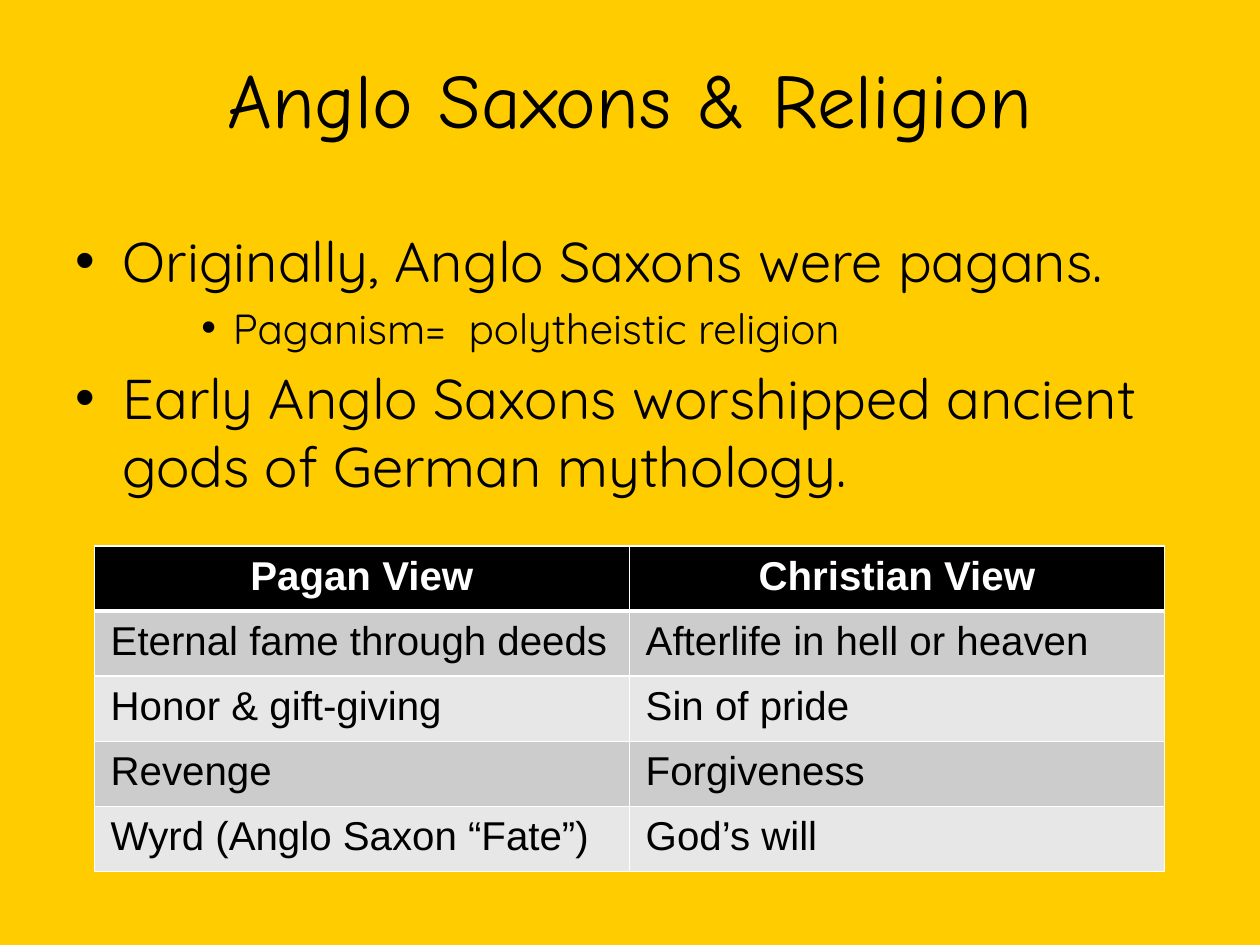
from lxml.etree import SubElement
from pptx import Presentation
from pptx.dml.color import RGBColor
from pptx.enum.text import MSO_ANCHOR, PP_ALIGN
from pptx.oxml.ns import qn
from pptx.util import Pt

YELLOW = RGBColor(0xFF, 0xCC, 0x00)
BLACK = RGBColor(0x00, 0x00, 0x00)
WHITE = RGBColor(0xFF, 0xFF, 0xFF)
GREY = RGBColor(0xCC, 0xCC, 0xCC)
PALE_GREY = RGBColor(0xE7, 0xE7, 0xE7)

TITLE = "Anglo Saxons & Religion"
POINTS = [
    (0, "Originally, Anglo Saxons were pagans."),
    (2, "Paganism=  polytheistic religion"),
    (0, "Early Anglo Saxons worshipped ancient gods of German mythology."),
]
LEVELS = {0: (32, 27, 27), 2: (24, 90, 18)}
VIEWS = [
    ("Pagan View", "Christian View"),
    ("Eternal fame through deeds", "Afterlife in hell or heaven"),
    ("Honor & gift-giving", "Sin of pride"),
    ("Revenge", "Forgiveness"),
    ("Wyrd (Anglo Saxon “Fate”)", "God’s will"),
]


def format_text(paragraph, font_name, size, color=BLACK, bold=False):
    """Apply one font to every run of a paragraph."""
    for run in paragraph.runs:
        run.font.name = font_name
        run.font.size = Pt(size)
        run.font.bold = bold
        run.font.color.rgb = color


def add_bullet(paragraph, margin, hanging):
    """Give a paragraph a round bullet with a hanging indent."""
    properties = paragraph._p.get_or_add_pPr()
    properties.set("marL", str(Pt(margin)))
    properties.set("indent", str(-Pt(hanging)))
    SubElement(properties, qn("a:buFont"), typeface="Arial")
    SubElement(properties, qn("a:buChar"), char="•")


def add_borders(cell, bottom_width):
    """Draw white lines around a table cell."""
    properties = cell._tc.get_or_add_tcPr()
    widths = {"lnL": 1, "lnR": 1, "lnT": 1, "lnB": bottom_width}
    for side, width in widths.items():
        line = SubElement(properties, qn(f"a:{side}"), w=str(Pt(width)))
        fill = SubElement(line, qn("a:solidFill"))
        SubElement(fill, qn("a:srgbClr"), val=str(WHITE))


def add_title(slide, left, top, width, height):
    """Place the centred heading."""
    heading = slide.shapes.add_textbox(Pt(left), Pt(top), Pt(width), Pt(height)).text_frame
    heading.word_wrap = True
    heading.vertical_anchor = MSO_ANCHOR.MIDDLE
    heading.text = TITLE
    heading.paragraphs[0].alignment = PP_ALIGN.CENTER
    format_text(heading.paragraphs[0], "Comic Neue", 44)


def add_points(slide, left, top, width, height):
    """Place the bulleted statements."""
    body = slide.shapes.add_textbox(Pt(left), Pt(top), Pt(width), Pt(height)).text_frame
    body.word_wrap = True
    body.text = "\n".join(text for _, text in POINTS)
    for paragraph, (level, _) in zip(body.paragraphs, POINTS):
        size, margin, hanging = LEVELS[level]
        paragraph.level = level
        paragraph.space_before = Pt(size * 0.2)
        add_bullet(paragraph, margin, hanging)
        format_text(paragraph, "Quicksand", size)


def add_views(slide, left, top, width, height):
    """Place the table that compares both views."""
    views = slide.shapes.add_table(
        len(VIEWS), len(VIEWS[0]), Pt(left), Pt(top), Pt(width), Pt(height)
    ).table
    views.horz_banding = False
    for row_index, row in enumerate(VIEWS):
        is_header = row_index == 0
        band = BLACK if is_header else (PALE_GREY, GREY)[row_index % 2]
        for column_index, text in enumerate(row):
            cell = views.cell(row_index, column_index)
            cell.text = text
            cell.margin_left = cell.margin_right = Pt(9.25)
            cell.margin_top = cell.margin_bottom = Pt(4.6)
            add_borders(cell, 3 if row_index == 0 else 1)
            cell.fill.solid()
            cell.fill.fore_color.rgb = band
            paragraph = cell.text_frame.paragraphs[0]
            paragraph.alignment = PP_ALIGN.CENTER if is_header else PP_ALIGN.LEFT
            format_text(paragraph, "Arial", 23, WHITE if is_header else BLACK, is_header)


def main():
    """Build and save the slide."""
    presentation = Presentation()
    presentation.slide_width = Pt(720)
    presentation.slide_height = Pt(540)
    slide = presentation.slides.add_slide(presentation.slide_layouts[6])
    slide.background.fill.solid()
    slide.background.fill.fore_color.rgb = YELLOW
    add_title(slide, 36, 21.6, 648, 68.4)
    add_points(slide, 36, 126, 648, 356.4)
    add_views(slide, 54, 312, 611.5, 186)
    presentation.save("out.pptx")


if __name__ == "__main__":
    main()
